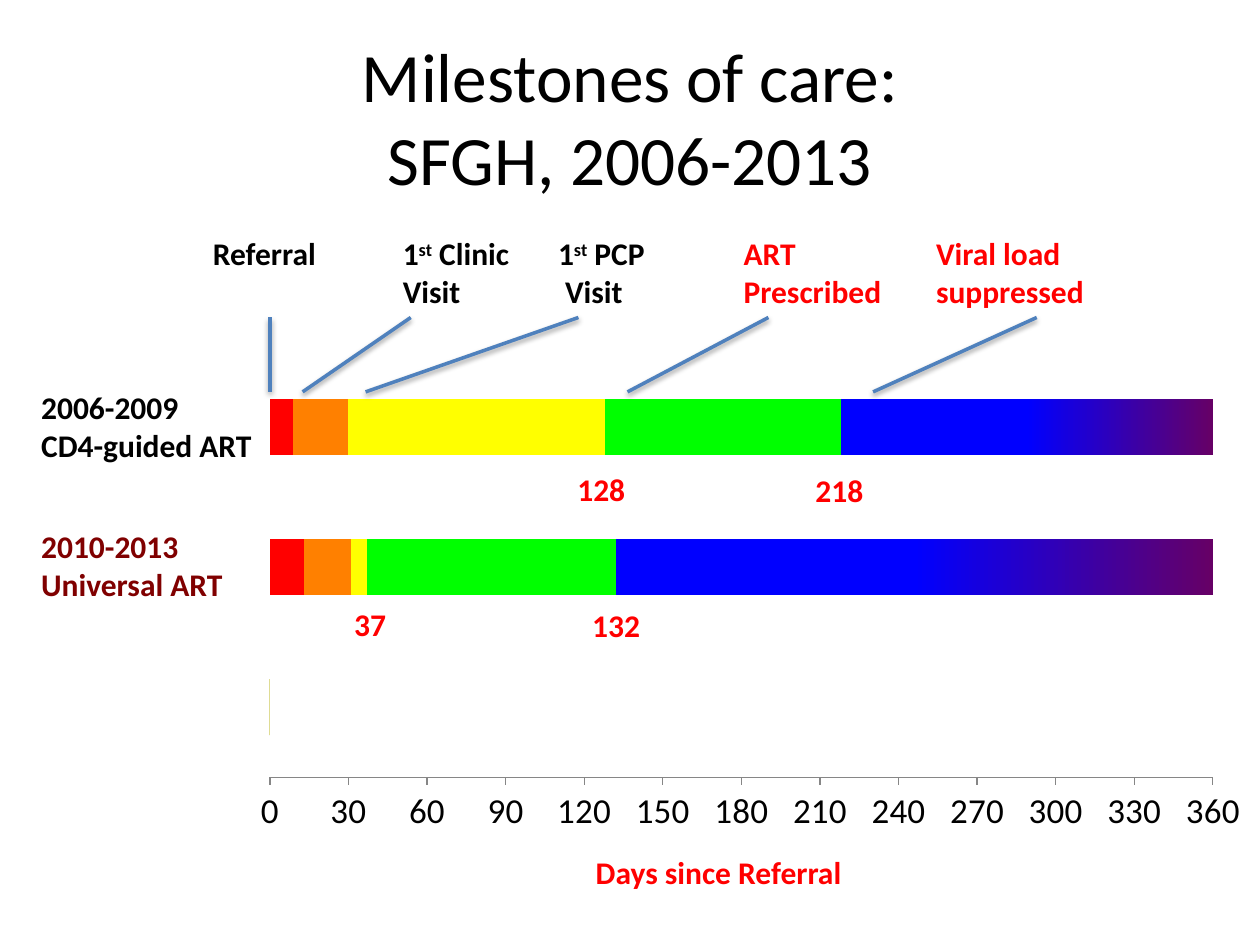
from dataclasses import dataclass

from lxml import etree
from pptx import Presentation
from pptx.chart import data as chart_data
from pptx.dml.color import RGBColor
from pptx.enum import chart as ch, shapes, text as tx
from pptx.oxml import ns, parse_xml
from pptx.util import Cm, Pt


@dataclass(frozen=True)
class Theme:
    font: str = "Calibri"
    ink: str = "000000"
    paper: str = "FFFFFF"
    accent: str = "FF0000"
    maroon: str = "800000"
    leader: str = "4F81BD"
    axis: str = "868686"
    stages: tuple = ("FF0000", "FF8000", "FFFF00", "00FF00", "0000FF")
    stage_end: str = "660066"
    title_size: float = 39.6
    axis_size: float = 20
    label_size: float = 18


THEME = Theme()

# Label lines, colour, label left and width, leader start and end (cm)
MILESTONES = [
    (["Referral"], THEME.ink, 4.04, 7.65, 5.44, 5.44),
    (["1^st^ Clinic", "Visit"], THEME.ink, 7.87, 6.02, 8.28, 6.1),
    (["1^st^ PCP", " Visit"], THEME.ink, 11, 6.4, 11.66, 7.37),
    (["ART", "Prescribed"], THEME.accent, 14.74, 4.67, 15.49, 12.65),
    (["Viral load", "suppressed"], THEME.accent, 18.62, 4.55, 20.9, 17.6),
]
# Label lines, colour, top and width (cm)
PERIODS = [
    (["2006-2009", "CD4-guided ART"], THEME.ink, 7.7, 5.36),
    (["2010-2013", "Universal ART"], THEME.maroon, 10.5, 5.97),
]
DAY_MARKS = [("132", 11.69, 12.09), ("37", 6.89, 12.07),
             ("218", 16.19, 9.38), ("128", 11.39, 9.35)]
# Days per stage for categories 1 to 3, bottom to top; the lowest row is empty
STAGE_DAYS = [(0, 13, 9), (0, 18, 21), (0, 6, 98), (0, 95, 90), (0, 230, 150)]

CHART_BOX = (4.85, 7.01, 20.55, 9.98)
PLOT_BOX = (5.44, 7.2, 19.01, 8.47)
LEADER_TOP, LEADER_BOTTOM = 6.4, 7.9


def rgb(code):
    return RGBColor.from_string(code)


def style_font(font, size, color, bold=False):
    font.name = THEME.font
    font.size = Pt(size)
    font.bold = bold
    font.color.rgb = rgb(color)


def write_text(frame, lines, size=THEME.label_size, color=THEME.ink, bold=True):
    """Fill a frame with paragraphs; text between carets is superscript."""
    frame.word_wrap = True
    frame.auto_size = tx.MSO_AUTO_SIZE.SHAPE_TO_FIT_TEXT
    frame.vertical_anchor = tx.MSO_ANCHOR.TOP
    for index, line in enumerate(lines):
        paragraph = frame.paragraphs[0] if index == 0 else frame.add_paragraph()
        paragraph.alignment = tx.PP_ALIGN.LEFT
        for part, words in enumerate(line.split("^")):
            run = paragraph.add_run()
            run.text = words
            style_font(run.font, size, color, bold)
            if part % 2:
                run._r.get_or_add_rPr().set("baseline", "30000")


def add_label(slide, lines, left, top, width, **style):
    height = 1.02 if len(lines) == 1 else 1.8
    box = slide.shapes.add_textbox(Cm(left), Cm(top), Cm(width), Cm(height))
    write_text(box.text_frame, lines, **style)


def add_day_mark(slide, days, left, top):
    mark = slide.shapes.add_shape(
        shapes.MSO_SHAPE.RECTANGLE, Cm(left), Cm(top), Cm(2.95), Cm(1.02))
    mark.shadow.inherit = False
    mark.fill.solid()
    mark.fill.fore_color.rgb = rgb(THEME.paper)
    mark.line.fill.background()
    write_text(mark.text_frame, [days], color=THEME.accent)


def add_title(slide):
    title = slide.shapes.title
    title.left, title.top, title.width, title.height = map(Cm, (1.27, 0.76, 22.86, 3.18))
    frame = title.text_frame
    frame.auto_size = tx.MSO_AUTO_SIZE.NONE
    frame.vertical_anchor = tx.MSO_ANCHOR.MIDDLE
    heading = frame.paragraphs[0]
    heading.alignment = tx.PP_ALIGN.CENTER
    heading.text = "Milestones of care:\vSFGH, 2006-2013"
    for run in heading.runs:
        style_font(run.font, THEME.title_size, THEME.ink)


def add_leader(slide, start, end):
    """Draw a line with a soft shadow from a milestone label to the top bar."""
    leader = slide.shapes.add_connector(
        shapes.MSO_CONNECTOR.STRAIGHT,
        Cm(start), Cm(LEADER_TOP), Cm(end), Cm(LEADER_BOTTOM))
    leader.line.color.rgb = rgb(THEME.leader)
    leader.line.width = Pt(2)
    effects = etree.SubElement(leader._element.spPr, ns.qn("a:effectLst"))
    effects.append(parse_xml(
        f'<a:outerShdw {ns.nsdecls("a")} blurRad="{Pt(3.1)}" dist="{Pt(1.6)}" '
        'dir="5400000" rotWithShape="0"><a:srgbClr val="000000">'
        '<a:alpha val="38000"/></a:srgbClr></a:outerShdw>'))


def fix_plot_area(chart):
    left, top, width, height = CHART_BOX
    x, y, w, h = PLOT_BOX
    fractions = {"x": (x - left) / width, "y": (y - top) / height,
                 "w": w / width, "h": h / height}
    modes = '<c:xMode val="edge"/><c:yMode val="edge"/>'
    places = "".join(f'<c:{key} val="{value:.4f}"/>' for key, value in fractions.items())
    layout = parse_xml(
        f'<c:layout {ns.nsdecls("c")}><c:manualLayout><c:layoutTarget val="inner"/>'
        f'{modes}{places}</c:manualLayout></c:layout>')
    plot_area = chart._chartSpace.chart.plotArea
    for old in plot_area.findall(ns.qn("c:layout")):
        plot_area.remove(old)
    plot_area.insert(0, layout)


def color_stages(plot):
    for stage, color in zip(plot.series, THEME.stages):
        stage.format.fill.solid()
        stage.format.fill.fore_color.rgb = rgb(color)
    fade = plot.series[-1].format.fill
    fade.gradient()
    fade.gradient_angle = 0
    for stop, position, color in zip(
            fade.gradient_stops, (0.5, 1), (THEME.stages[-1], THEME.stage_end)):
        stop.position = position
        stop.color.rgb = rgb(color)


def add_timeline(slide):
    timeline = chart_data.CategoryChartData()
    timeline.categories = ["1", "2", "3"]
    for number, days in enumerate(STAGE_DAYS, 1):
        timeline.add_series(f"Series {number}", days)
    chart = slide.shapes.add_chart(
        ch.XL_CHART_TYPE.BAR_STACKED, *map(Cm, CHART_BOX), timeline).chart
    chart.has_legend = False
    chart.has_title = False
    style_font(chart.font, THEME.axis_size, THEME.ink)

    plot = chart.plots[0]
    plot.gap_width = 150
    plot.overlap = 100
    plot.vary_by_categories = False
    color_stages(plot)

    chart.category_axis.visible = False
    days_axis = chart.value_axis
    days_axis.minimum_scale, days_axis.maximum_scale = 0, 360
    days_axis.major_unit = 30
    days_axis.has_major_gridlines = False
    days_axis.major_tick_mark = ch.XL_TICK_MARK.OUTSIDE
    days_axis.format.line.color.rgb = rgb(THEME.axis)
    fix_plot_area(chart)


def main():
    deck = Presentation()
    deck.slide_width, deck.slide_height = Cm(25.4), Cm(19.05)
    slide = deck.slides.add_slide(deck.slide_layouts[5])

    add_title(slide)
    add_timeline(slide)
    for lines, color, left, width, start, end in MILESTONES:
        add_label(slide, lines, left, 4.6, width, color=color)
        add_leader(slide, start, end)
    for lines, color, top, width in PERIODS:
        add_label(slide, lines, 0.58, top, width, color=color)
    for days, left, top in DAY_MARKS:
        add_day_mark(slide, days, left, top)
    add_label(slide, ["Days since Referral"], 11.76, 17.07, 5.97, color=THEME.accent)

    deck.save("out.pptx")


if __name__ == "__main__":
    main()
